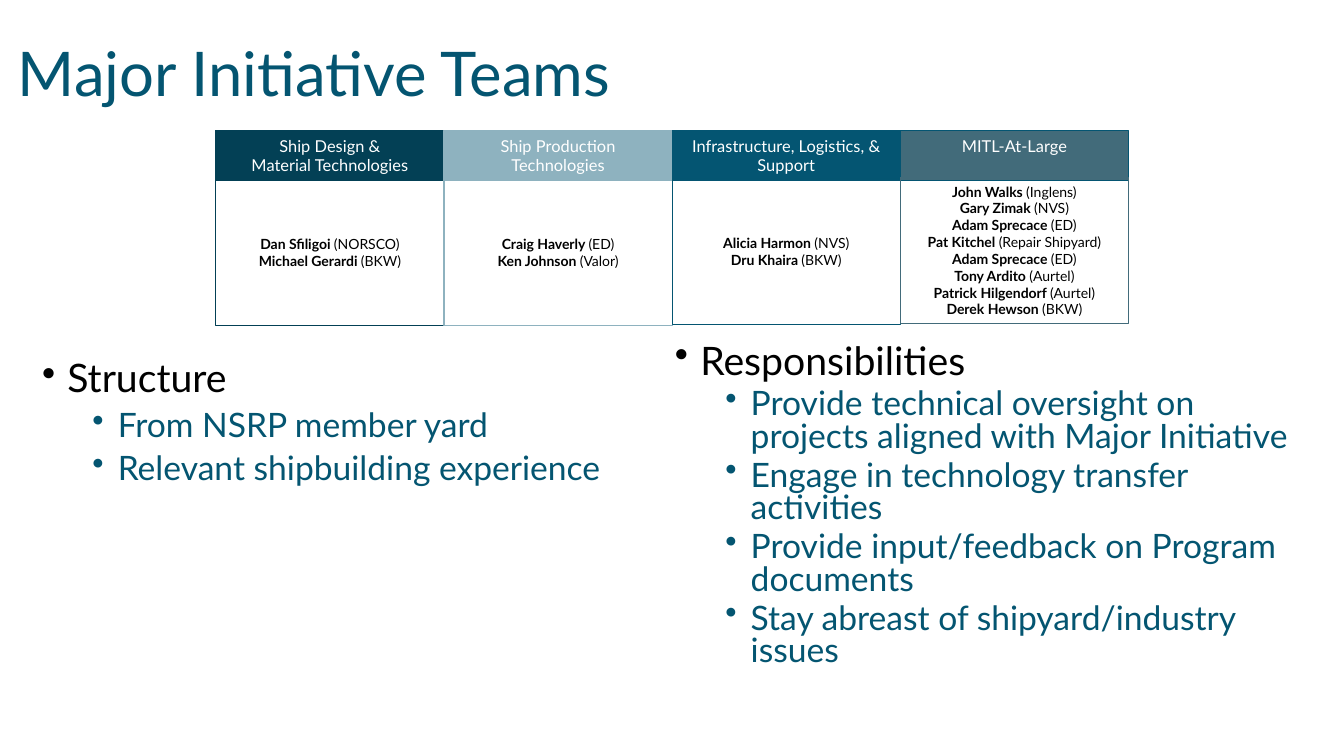
import pptx
import pptx.dml.color
import pptx.enum.shapes
import pptx.enum.text
import pptx.oxml
import pptx.oxml.ns
import pptx.util

ALIGN = pptx.enum.text.PP_ALIGN
ANCHOR = pptx.enum.text.MSO_ANCHOR
TEAL = "045571"
TEAMS = [
    ("Ship Design &\nMaterial Technologies", "034055", "034055", "034055", 4.52,
     [("Dan Sfiligoi", "NORSCO"), ("Michael Gerardi", "BKW")]),
    ("Ship Production\nTechnologies", "8EB2BF", "8EB2BF", "8EB2BF", 4.52,
     [("Craig Haverly", "ED"), ("Ken Johnson", "Valor")]),
    ("Infrastructure, Logistics, & Support", "045572", "045572", TEAL, 4.5,
     [("Alicia Harmon", "NVS"), ("Dru Khaira", "BKW")]),
    ("MITL-At-Large", "426B7A", "045572", "426B7A", 4.47,
     [("John Walks", "Inglens"), ("Gary Zimak", "NVS"), ("Adam Sprecace", "ED"),
      ("Pat Kitchel", "Repair Shipyard"), ("Adam Sprecace", "ED"),
      ("Tony Ardito", "Aurtel"), ("Patrick Hilgendorf", "Aurtel"),
      ("Derek Hewson", "BKW")]),
]
STRUCTURE = ["From NSRP member yard", "Relevant shipbuilding experience"]
RESPONSIBILITIES = [
    "Provide technical oversight on projects aligned with Major Initiative",
    "Engage in technology transfer activities",
    "Provide input/feedback on Program documents",
    "Stay abreast of shipyard/industry issues",
]


def color(value):
    return pptx.dml.color.RGBColor.from_string(value)


def write(para, text, size=10, ink="000000", bold=False):
    for index, line in enumerate(text.split("\n")):
        if index:
            para.add_line_break()
        span = para.add_run()
        span.text = line
        span.font.name = "Lato"
        span.font.size = pptx.util.Pt(size)
        span.font.bold = bold
        span.font.color.rgb = color(ink)


class SlideWriter:
    """Adds styled titles, lists and boxes to one slide."""

    def __init__(self, page):
        self.page = page

    def text_box(self, left, top, width, height):
        box = self.page.shapes.add_textbox(*map(pptx.util.Cm, (left, top, width, height)))
        box.text_frame.word_wrap = True
        return box.text_frame

    def title(self, text):
        frame = self.text_box(0.2, 0.58, 29.21, 2.31)
        frame.vertical_anchor = ANCHOR.BOTTOM
        frame.paragraphs[0].line_spacing = 0.9
        write(frame.paragraphs[0], text, size=44, ink=TEAL)

    def bullet(self, para, indent):
        properties = para._p.get_or_add_pPr()
        properties.set("marL", str(pptx.util.Cm(indent)))
        properties.set("indent", str(-pptx.util.Cm(0.64)))
        mark = pptx.oxml.parse_xml(
            f'<a:buChar {pptx.oxml.ns.nsdecls("a")} char="•"/>')
        properties.append(mark)

    def bullets(self, heading, items, left, top, width, height, spacing):
        frame = self.text_box(left, top, width, height)
        para = frame.paragraphs[0]
        self.bullet(para, 0.64)
        para.line_spacing = spacing
        write(para, heading, size=28)
        for item in items:
            para = frame.add_paragraph()
            para.level = 1
            self.bullet(para, 1.91)
            para.line_spacing = spacing
            para.space_before = pptx.util.Pt(5)
            write(para, item, size=24, ink=TEAL)

    def rectangle(self, left, top, width, height, line, fill=None):
        shape = self.page.shapes.add_shape(
            pptx.enum.shapes.MSO_SHAPE.RECTANGLE,
            *map(pptx.util.Cm, (left, top, width, height)))
        shape.shadow.inherit = False
        shape.line.color.rgb = color(line)
        shape.line.width = pptx.util.Pt(0.75)
        if fill:
            shape.fill.solid()
            shape.fill.fore_color.rgb = color(fill)
        else:
            shape.fill.background()
        shape.text_frame.word_wrap = True
        return shape.text_frame

    def team(self, left, width, name, fill, header_line, body_line, body_top, members):
        header = self.rectangle(left, 3.3, width, 1.24, header_line, fill)
        header.vertical_anchor = ANCHOR.TOP
        header.paragraphs[0].alignment = ALIGN.CENTER
        write(header.paragraphs[0], name, size=11.7, ink="FFFFFF")
        body = self.rectangle(left, body_top, width, 3.68, body_line)
        body.vertical_anchor = ANCHOR.MIDDLE
        for index, (person, yard) in enumerate(members):
            para = body.add_paragraph() if index else body.paragraphs[0]
            para.alignment = ALIGN.CENTER
            write(para, person + " ", bold=True)
            write(para, f"({yard})")


def main():
    deck = pptx.Presentation()
    deck.slide_width = pptx.util.Cm(33.87)
    deck.slide_height = pptx.util.Cm(19.05)
    writer = SlideWriter(deck.slides.add_slide(deck.slide_layouts[6]))
    writer.title("Major Initiative Teams")
    writer.bullets("Structure", STRUCTURE, 0.81, 8.92, 14.86, 8.38, 0.9)
    writer.bullets("Responsibilities", RESPONSIBILITIES, 16.76, 8.58, 16.1, 9.5, 0.8)
    width = 5.75
    for column, team in enumerate(TEAMS):
        writer.team(5.44 + column * width, width, *team)
    deck.save("out.pptx")


if __name__ == "__main__":
    main()
